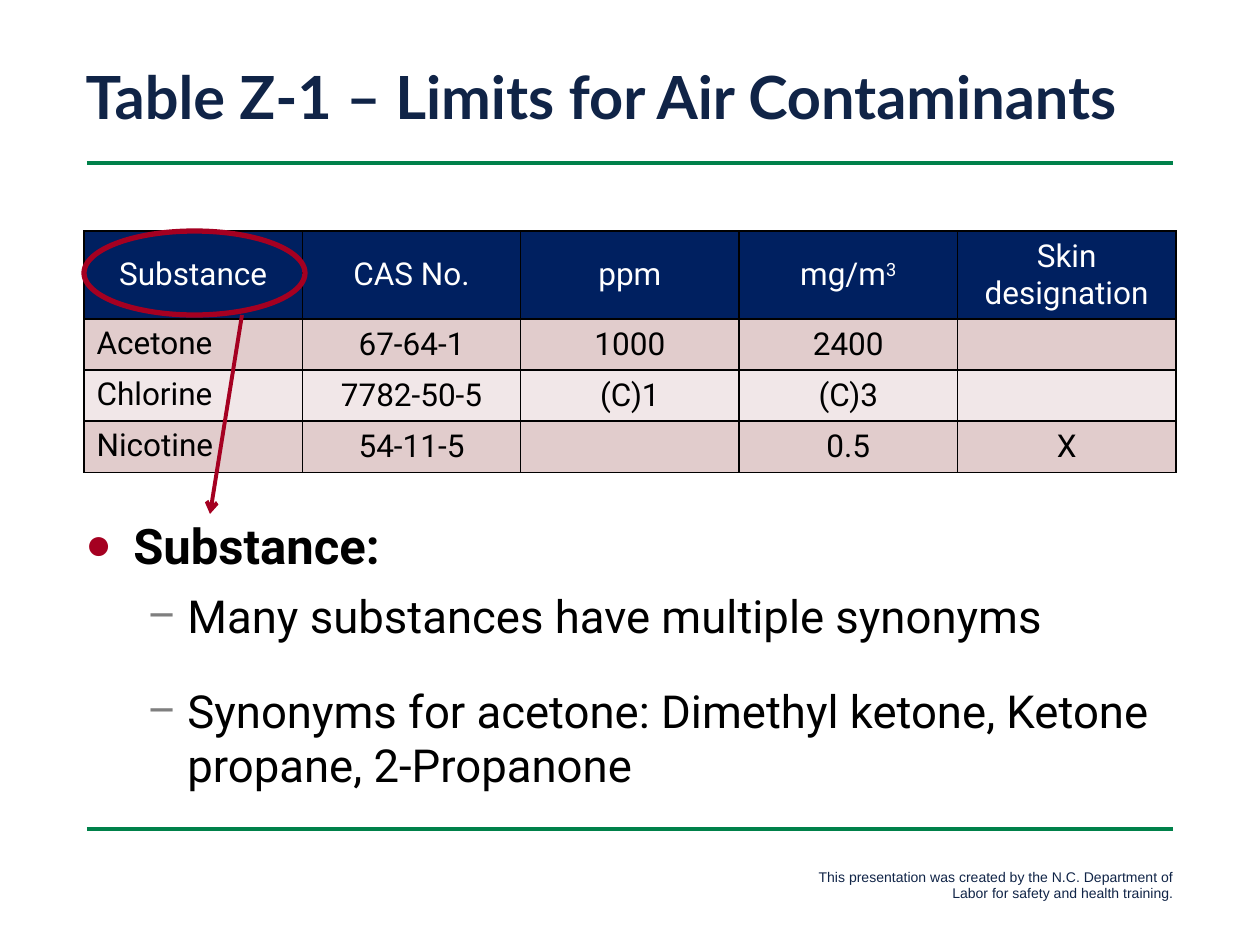
import pptx
import pptx.util
import pptx.dml.color
import pptx.enum.shapes
import pptx.enum.text
import pptx.oxml.ns
from lxml import etree

PX = 914400 / 126
NAVY, GREEN, RED = "102447", "00814A", "A50021"
LEFT = pptx.enum.text.PP_ALIGN.LEFT
CENTER = pptx.enum.text.PP_ALIGN.CENTER
RIGHT = pptx.enum.text.PP_ALIGN.RIGHT
MIDDLE = pptx.enum.text.MSO_ANCHOR.MIDDLE
TOP = pptx.enum.text.MSO_ANCHOR.TOP

ROWS = [
    ["Substance", "CAS No.", "ppm", "mg/m3", "Skin designation"],
    ["Acetone", "67-64-1", "1000", "2400", ""],
    ["Chlorine", "7782-50-5", "(C)1", "(C)3", ""],
    ["Nicotine", "54-11-5", "", "0.5", "X"],
]
POINTS = [
    ("Substance:", "●", RED, 90, 48, 48, 28, True, 0),
    ("Many substances have multiple synonyms", "−", "7F7F7F", 100, 102, 39, 26, False, 8),
    ("Synonyms for acetone: Dimethyl ketone, Ketone propane, 2-Propanone",
     "−", "7F7F7F", 100, 102, 39, 26, False, 23),
]


def px(n):
    return pptx.util.Emu(round(n * PX))


def rgb(value):
    return pptx.dml.color.RGBColor.from_string(value)


def add_xml(parent, tag, **attrs):
    el = etree.SubElement(parent, pptx.oxml.ns.qn(tag))
    for name, value in attrs.items():
        el.set(name, str(value))
    return el


def format_font(font, name, size, color, bold=False):
    font.name = name
    font.size = pptx.util.Pt(size)
    font.bold = bold
    font.color.rgb = rgb(color)


def add_line(s, x1, y1, x2, y2, color, width, arrow=False):
    line = s.shapes.add_connector(
        pptx.enum.shapes.MSO_CONNECTOR.STRAIGHT, px(x1), px(y1), px(x2), px(y2))
    line.line.color.rgb = rgb(color)
    line.line.width = pptx.util.Pt(width)
    if arrow:
        add_xml(line.line._get_or_add_ln(), "a:tailEnd", type="arrow")
    add_xml(line._element.spPr, "a:effectLst")


def add_title(s, x, y, w, h):
    sp = s.shapes.title
    sp.left, sp.top, sp.width, sp.height = px(x), px(y), px(w), px(h)
    tf = sp.text_frame
    tf.text = "Table Z-1 – Limits for Air Contaminants"
    tf.vertical_anchor = MIDDLE
    p = tf.paragraphs[0]
    p.alignment = LEFT
    p.line_spacing = 0.9
    format_font(p.runs[0].font, "Lato", 34, NAVY, True)


def add_footer(s, x, y, w, h):
    tf = s.shapes.add_textbox(px(x), px(y), px(w), px(h)).text_frame
    tf.word_wrap = True
    tf.text = ("This presentation was created by the N.C. Department of "
               "Labor for safety and health training.")
    p = tf.paragraphs[0]
    p.alignment = RIGHT
    format_font(p.runs[0].font, "Arial", 8, NAVY)


def fill_cell(cell, text, row, col):
    header = row == 0
    cell.fill.solid()
    cell.fill.fore_color.rgb = rgb("002060" if header else ("F1E7E8", "E1CCCC")[row % 2])
    cell.vertical_anchor = MIDDLE if header or col else TOP
    p = cell.text_frame.paragraphs[0]
    p.alignment = CENTER if header or col else LEFT
    if text == "mg/m3":
        p.text = text[:-1]
        r = p.add_run()
        r.text = text[-1]
        r.font._element.set("baseline", "30000")
    else:
        p.text = text
    for r in p.runs:
        format_font(r.font, "Roboto", 18, "FFFFFF" if header else "000000")
    tcPr = cell._tc.get_or_add_tcPr()
    for i, side in enumerate(("a:lnL", "a:lnR", "a:lnT", "a:lnB")):
        ln = add_xml(tcPr, side, w=12700)
        add_xml(add_xml(ln, "a:solidFill"), "a:srgbClr", val="000000")
        tcPr.insert(i, ln)


def add_limits_table(s, x, y, w, header_h, row_h):
    n_rows, n_cols = len(ROWS), len(ROWS[0])
    h = header_h + row_h * (n_rows - 1)
    table = s.shapes.add_table(n_rows, n_cols, px(x), px(y), px(w), px(h)).table
    for col in table.columns:
        col.width = px(w / n_cols)
    for i, values in enumerate(ROWS):
        table.rows[i].height = px(row_h if i else header_h)
        for j, text in enumerate(values):
            fill_cell(table.cell(i, j), text, i, j)


def add_callout(s, x, y, w, h):
    sp = s.shapes.add_shape(
        pptx.enum.shapes.MSO_SHAPE.OVAL, px(x), px(y), px(w), px(h))
    sp.shadow.inherit = False
    sp.fill.background()
    sp.line.color.rgb = rgb(RED)
    sp.line.width = pptx.util.Pt(3)
    add_line(s, x + 158, y + h, x + 126, y + 283, RED, 2.25, True)


def add_points(s, x, y, w, h):
    tf = s.shapes.add_textbox(px(x), px(y), px(w), px(h)).text_frame
    tf.word_wrap = True
    for i, (text, char, color, pct, margin, hang, size, bold, before) in enumerate(POINTS):
        p = tf.add_paragraph() if i else tf.paragraphs[0]
        p.text = text
        p.level = 1 if i else 0
        if before:
            p.space_before = pptx.util.Pt(before)
        pPr = p._p.get_or_add_pPr()
        pPr.set("marL", str(px(margin)))
        pPr.set("indent", str(-px(hang)))
        add_xml(add_xml(pPr, "a:buClr"), "a:srgbClr", val=color)
        add_xml(pPr, "a:buSzPct", val=pct * 1000)
        add_xml(pPr, "a:buFont", typeface="Arial")
        add_xml(pPr, "a:buChar", char=char)
        format_font(p.runs[0].font, "Roboto", size, "000000", bold)


def main():
    prs = pptx.Presentation()
    prs.slide_width, prs.slide_height = px(1260), px(945)
    s = prs.slides.add_slide(prs.slide_layouts[5])
    for y in (163, 829):
        add_line(s, 87, y, 1173, y, GREEN, 2)
    add_title(s, 73, 63, 1165, 74)
    add_limits_table(s, 84, 231, 1092, 88, 51)
    add_callout(s, 84, 231, 221, 84)
    add_points(s, 73, 509, 1103, 300)
    add_footer(s, 776, 862, 410, 47)
    prs.save("out.pptx")


if __name__ == "__main__":
    main()
